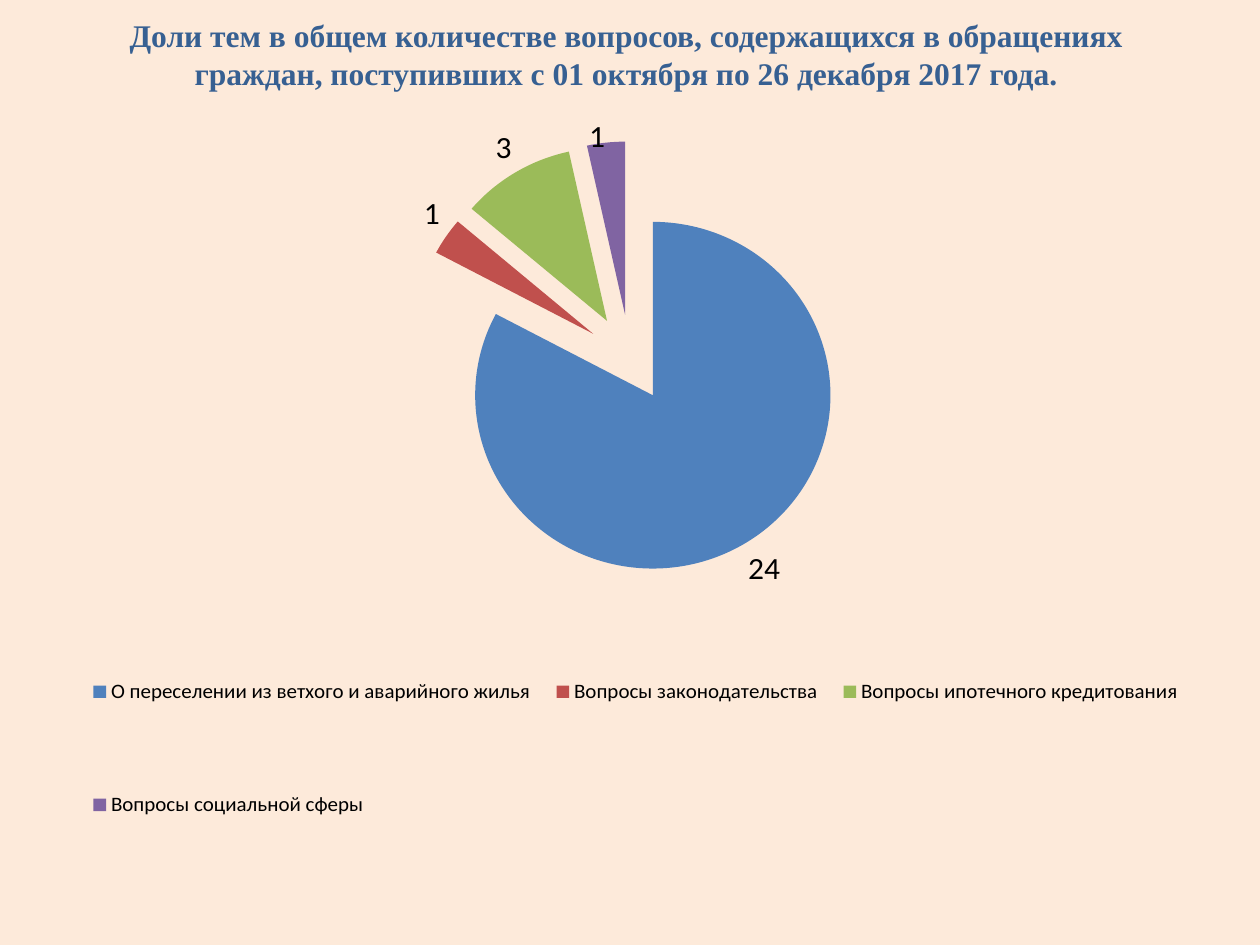
from lxml import etree
from pptx import Presentation
from pptx import util as u
from pptx.chart import data
from pptx.dml import color
from pptx.enum import chart as kinds, text
from pptx.oxml import ns

TITLE = ("Доли тем в общем количестве вопросов, содержащихся в обращениях граждан, "
         "поступивших с 01 октября по 26 декабря 2017 года.")
TOPICS = [
    ("О переселении из ветхого и аварийного жилья", 24, "blue"),
    ("Вопросы законодательства", 1, "red"),
    ("Вопросы ипотечного кредитования", 3, "green"),
    ("Вопросы социальной сферы", 1, "violet"),
]
COLORS = {
    "back": "FDEADA", "title": "376092", "text": "000000",
    "blue": "4F81BD", "red": "C0504D", "green": "9BBB59", "violet": "8064A2",
}
WIDTH, HEIGHT = 10, 7.5
TITLE_BOX = (0.47, 0, 9, 0.86)
CHART_BOX = (0.5, 0.78, 9, 6.41)
PIE_SHARE = (0, 0.03, 1, 0.55)
LEGEND_SHARE = (0.01, 0.6, 0.99, 0.4)
EXPLOSION = 25
TITLE_FONT = {"name": "Times New Roman", "size": u.Pt(18), "bold": True}
CHART_FONT = {"name": "Calibri", "size": u.Pt(18)}
LEGEND_FONT = {"name": "Calibri", "size": u.Pt(12)}


def rgb(name):
    return color.RGBColor.from_string(COLORS[name])


def inches(box):
    return [u.Inches(length) for length in box]


def format_font(font, values, shade):
    for name, value in values.items():
        setattr(font, name, value)
    font.color.rgb = rgb(shade)


def chart_element(tag, value=None):
    element = etree.Element(ns.qn(f"c:{tag}"))
    if value is not None:
        element.set("val", str(value))
    return element


def place(parent, share, after=None, inner=False):
    for old in parent.findall(ns.qn("c:layout")):
        parent.remove(old)
    layout = chart_element("layout")
    manual = chart_element("manualLayout")
    layout.append(manual)
    if inner:
        manual.append(chart_element("layoutTarget", "inner"))
    for tag in ("xMode", "yMode"):
        manual.append(chart_element(tag, "edge"))
    for tag, value in zip("xywh", share):
        manual.append(chart_element(tag, value))
    if after is None:
        parent.insert(0, layout)
    else:
        after.addnext(layout)


def add_title(page):
    title = page.shapes.title
    title.left, title.top, title.width, title.height = inches(TITLE_BOX)
    frame = title.text_frame
    frame.word_wrap = True
    frame.vertical_anchor = text.MSO_ANCHOR.MIDDLE
    para = frame.paragraphs[0]
    para.alignment = text.PP_ALIGN.CENTER
    span = para.add_run()
    span.text = TITLE
    format_font(span.font, TITLE_FONT, "title")


def add_pie(page):
    topics = data.CategoryChartData()
    topics.categories = [name for name, _, _ in TOPICS]
    topics.add_series("Series 1", [count for _, count, _ in TOPICS])
    chart = page.shapes.add_chart(
        kinds.XL_CHART_TYPE.PIE, *inches(CHART_BOX), topics).chart
    chart.has_title = False
    format_font(chart.font, CHART_FONT, "text")

    plot = chart.plots[0]
    plot.vary_by_categories = True
    series = plot.series[0]
    for index, (_, _, shade) in enumerate(TOPICS):
        fill = series.points[index].format.fill
        fill.solid()
        fill.fore_color.rgb = rgb(shade)
    first_point = series._element.find(ns.qn("c:dPt"))
    first_point.addprevious(chart_element("explosion", EXPLOSION))

    labels = series.data_labels
    labels.show_value = True
    labels.position = kinds.XL_LABEL_POSITION.OUTSIDE_END
    format_font(labels.font, CHART_FONT, "text")

    chart.has_legend = True
    legend = chart.legend
    legend.position = kinds.XL_LEGEND_POSITION.BOTTOM
    legend.include_in_layout = False
    format_font(legend.font, LEGEND_FONT, "text")
    legend_part = legend._element
    place(legend_part, LEGEND_SHARE, legend_part.find(ns.qn("c:legendPos")))
    place(chart._chartSpace.chart.plotArea, PIE_SHARE, inner=True)


def main():
    deck = Presentation()
    deck.slide_width, deck.slide_height = inches((WIDTH, HEIGHT))
    page = deck.slides.add_slide(deck.slide_layouts.get_by_name("Title Only"))
    page.background.fill.solid()
    page.background.fill.fore_color.rgb = rgb("back")
    add_title(page)
    add_pie(page)
    deck.save("out.pptx")


if __name__ == "__main__":
    main()
